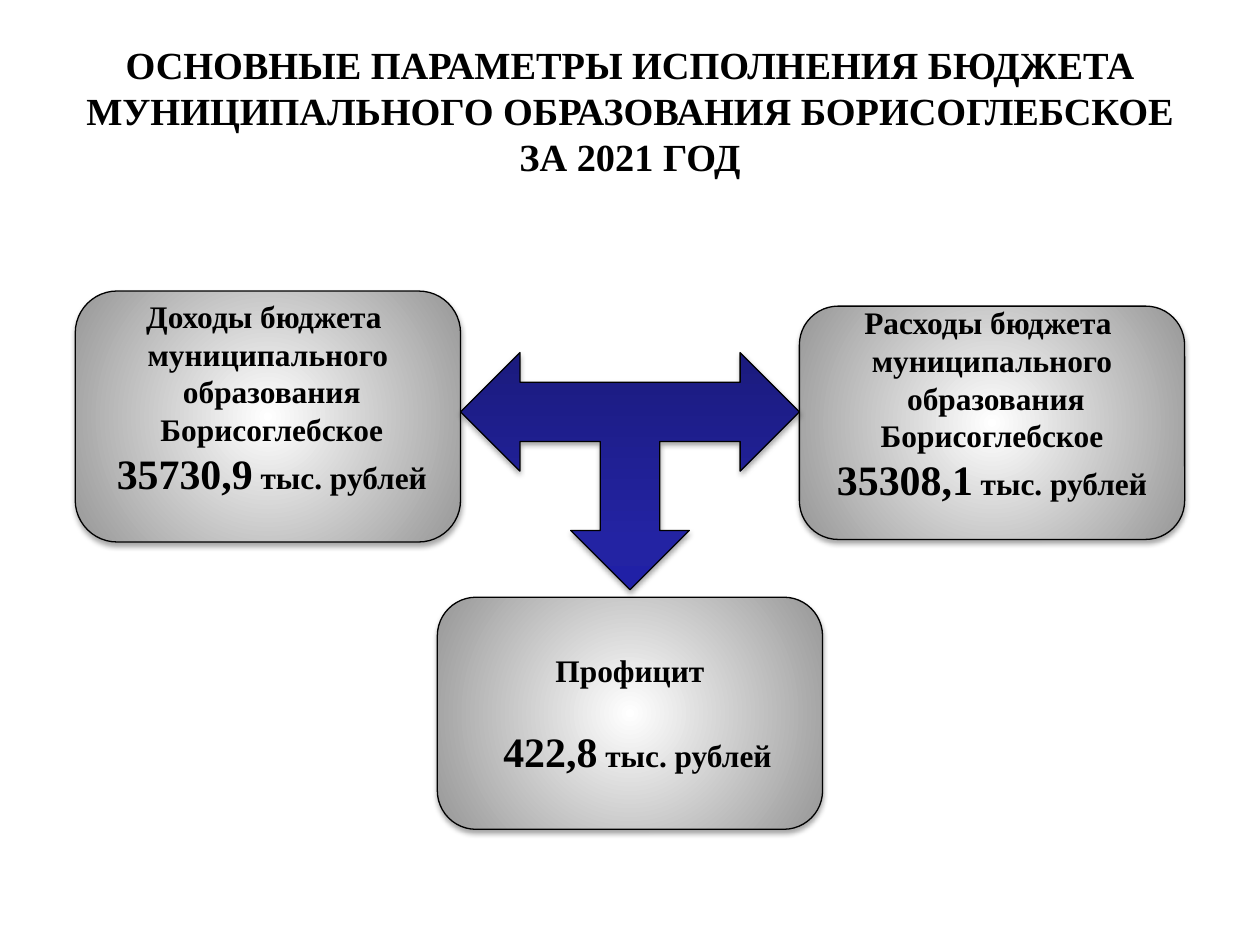
from lxml import etree
from pptx import Presentation
from pptx.dml.color import RGBColor
from pptx.enum.shapes import MSO_SHAPE
from pptx.enum.text import MSO_ANCHOR, MSO_AUTO_SIZE, PP_ALIGN
from pptx.oxml import parse_xml
from pptx.oxml.ns import nsdecls, qn
from pptx.util import Inches, Pt

ROUNDED = MSO_SHAPE.ROUNDED_RECTANGLE
THREE_WAY_ARROW = MSO_SHAPE.LEFT_RIGHT_UP_ARROW
CENTER = PP_ALIGN.CENTER
TOP, MIDDLE = MSO_ANCHOR.TOP, MSO_ANCHOR.MIDDLE
NO_AUTOFIT = MSO_AUTO_SIZE.NONE

# Content: each paragraph is a list of (text, size) runs
FONT = "Times New Roman"
BLACK = "000000"
TITLE = [
    [("ОСНОВНЫЕ ПАРАМЕТРЫ ИСПОЛНЕНИЯ БЮДЖЕТА "
      "МУНИЦИПАЛЬНОГО ОБРАЗОВАНИЯ БОРИСОГЛЕБСКОЕ", 22)],
    [("ЗА 2021 ГОД", 22)],
]
UNIT = (" тыс. рублей", 18)
AREA = [[("муниципального", 18)], [(" образования", 18)]]
EXPENSES = [[("Расходы бюджета ", 18)], *AREA,
            [(" Борисоглебское ", 18)], [("35308,1", 24), UNIT]]
INCOME = [[("Доходы бюджета ", 18)], *AREA,
          [(" Борисоглебское", 18)], [(" ", 18), ("35730,9", 24), UNIT]]
SURPLUS = [[("Профицит", 18)], [("422,8", 24), UNIT]]

# Layout in inches
SLIDE_WIDTH, SLIDE_HEIGHT = 10.04, 7.5
BOX_WIDTH = 3.07
SIDE = 0.6
CENTER_LEFT = (SLIDE_WIDTH - BOX_WIDTH) / 2
RIGHT_LEFT = SLIDE_WIDTH - SIDE - BOX_WIDTH
ARROW_WIDTH = RIGHT_LEFT - SIDE - BOX_WIDTH
# paragraphs, left, top, height, space kept free below the text
BOXES = [
    (EXPENSES, RIGHT_LEFT, 2.44, 1.86, 0.3),
    (INCOME, SIDE, 2.32, 2.0, 0.3),
    (SURPLUS, CENTER_LEFT, 4.76, 1.85, 0),
]

# Gradients: (position in percent, colour)
SILVER = [(0, "FFFFFF"), (100, "979797")]
NAVY = [(0, "1B1B7E"), (80, "2323A3"), (100, "2020A6")]
RADIAL = ('<a:path path="circle"><a:fillToRect l="50000" t="50000" '
          'r="50000" b="50000"/></a:path>')
UPWARD = '<a:lin ang="16200000" scaled="0"/>'


def color(value):
    return RGBColor.from_string(value)


def write_text(frame, paragraphs, anchor=MIDDLE, wrap=False, margins=(0.05, 0.05)):
    frame.auto_size = NO_AUTOFIT
    frame.word_wrap = wrap
    frame.vertical_anchor = anchor
    frame.margin_left = frame.margin_right = Inches(0.1)
    frame.margin_top, frame.margin_bottom = map(Inches, margins)
    for index, runs in enumerate(paragraphs):
        paragraph = frame.add_paragraph() if index else frame.paragraphs[0]
        paragraph.alignment = CENTER
        for text, size in runs:
            run = paragraph.add_run()
            run.text = text
            run.font.name = FONT
            run.font.size = Pt(size)
            run.font.bold = True
            run.font.color.rgb = color(BLACK)


def add_block(slide, kind, left, top, width, height, stops, direction):
    shape = slide.shapes.add_shape(kind, *map(Inches, (left, top, width, height)))
    # Gradient fill
    shape.fill.gradient()
    properties = shape._element.spPr
    stop_list = "".join(
        f'<a:gs pos="{position * 1000}"><a:srgbClr val="{value}"/></a:gs>'
        for position, value in stops)
    gradient = parse_xml(
        f'<a:gradFill {nsdecls("a")} rotWithShape="1">'
        f'<a:gsLst>{stop_list}</a:gsLst>{direction}</a:gradFill>')
    properties.replace(properties.find(qn("a:gradFill")), gradient)
    # Outline
    shape.line.color.rgb = color(BLACK)
    shape.line.width = Pt(0.75)
    # Soft shadow straight below
    shape.shadow.inherit = False
    shadow = etree.SubElement(
        properties.find(qn("a:effectLst")), qn("a:outerShdw"),
        blurRad=str(Pt(3.1)), dist=str(Pt(1.8)), dir="5400000", rotWithShape="0")
    shade = etree.SubElement(shadow, qn("a:srgbClr"), val=BLACK)
    etree.SubElement(shade, qn("a:alpha"), val="35000")
    return shape


def main():
    presentation = Presentation()
    presentation.slide_width = Inches(SLIDE_WIDTH)
    presentation.slide_height = Inches(SLIDE_HEIGHT)
    slide = presentation.slides.add_slide(presentation.slide_layouts[5])

    # Title
    title = slide.shapes.title
    title.left, title.top = Inches(0), Inches(0.28)
    title.width, title.height = Inches(SLIDE_WIDTH), Inches(1.21)
    write_text(title.text_frame, TITLE, anchor=TOP, wrap=True)

    # Budget boxes
    for paragraphs, left, top, height, free_below in BOXES:
        box = add_block(slide, ROUNDED, left, top, BOX_WIDTH, height, SILVER, RADIAL)
        write_text(box.text_frame, paragraphs, margins=(0.05, 0.05 + free_below))

    # The surplus amount stands one line lower and slightly to the right
    amount = box.text_frame.paragraphs[-1]
    amount.space_before = Pt(21)
    amount._p.get_or_add_pPr().set("marL", str(Inches(0.12)))

    # Arrow from income and expenses down to the surplus
    arrow = add_block(slide, THREE_WAY_ARROW, SIDE + BOX_WIDTH, 2.81,
                      ARROW_WIDTH, 1.89, NAVY, UPWARD)
    arrow.rotation = 180

    presentation.save("out.pptx")


if __name__ == "__main__":
    main()
